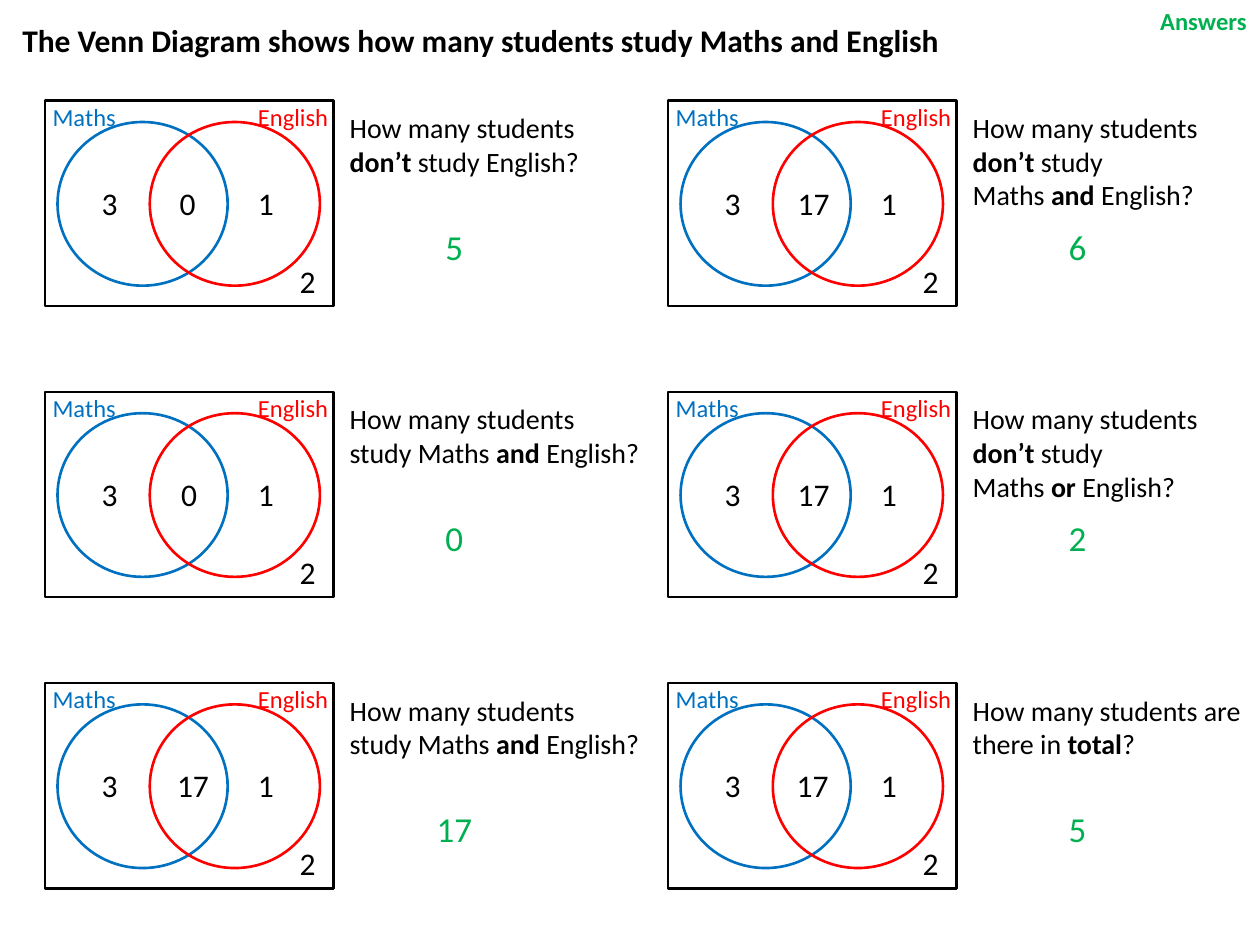
from pptx import Presentation
from pptx import util as u
from pptx.dml.color import RGBColor
from pptx.enum import shapes, text

COLORS = {"ink": "000000", "maths": "0070C0", "english": "FF0000", "answer": "00B050"}
FONT = "Calibri"

TITLE = "The Venn Diagram shows how many students study Maths and English"
CORNER = "Answers"

# Each question is a list of paragraphs; every second run of a paragraph is bold.
BOTH = [("How many students study Maths ", "and", " English?")]
NEITHER = ("How many students ", "don’t", " study")
PANELS = [
    {"both": "0", "both_left": 2.46, "answer": "5", "width": 6.15,
     "question": [("How many students ", "don’t", " study English?")]},
    {"both": "17", "both_left": 2.36, "answer": "6", "width": 6.05,
     "question": [NEITHER, ("Maths ", "and", " English?")]},
    {"both": "0", "both_left": 2.49, "answer": "0", "width": 6.4, "question": BOTH},
    {"both": "17", "both_left": 2.36, "answer": "2", "width": 6.15,
     "question": [NEITHER, ("Maths ", "or", " English?")]},
    {"both": "17", "both_left": 2.41, "answer": "17", "width": 6.4, "question": BOTH},
    {"both": "17", "both_left": 2.34, "answer": "5", "width": 6.15,
     "question": [("How many students are there in ", "total", "?")]},
]

# Panel grid, in cm
COLUMNS = 2
LEFT, TOP = 0.91, 2.03
COLUMN_STEP, ROW_STEP = 12.56, 5.87

# Parts of every diagram: box in cm from the corner of its frame
OUTLINES = [
    (shapes.MSO_SHAPE.RECTANGLE, (0, 0, 5.82, 4.14), "ink"),
    (shapes.MSO_SHAPE.OVAL, (0.25, 0.43, 3.43, 3.3), "maths"),
    (shapes.MSO_SHAPE.OVAL, (2.11, 0.43, 3.43, 3.3), "english"),
]
LABELS = [
    ("3", (0.89, 1.55, 0.91, 1.02), 18, "ink"),
    ("1", (4.04, 1.55, 0.91, 1.02), 18, "ink"),
    ("2", (4.88, 3.12, 0.91, 1.02), 18, "ink"),
    ("English", (4.04, -0.1, 2.03, 0.86), 14, "english"),
    ("Maths", (-0.1, -0.1, 2.84, 0.86), 14, "maths"),
]


def place(box, corner=(0, 0)):
    left, top, width, height = box
    return [u.Cm(value) for value in (left + corner[0], top + corner[1], width, height)]


def add_outline(parent, kind, box, color):
    shape = parent.add_shape(kind, *box)
    shape.shadow.inherit = False
    shape.fill.background()
    shape.line.color.rgb = RGBColor.from_string(COLORS[color])
    shape.line.width = u.Pt(1.5)


def add_text(parent, paragraphs, box, size, color, bold=False, wrap=True,
             align=text.PP_ALIGN.LEFT):
    """Add a text box whose runs alternate between plain and bold."""
    frame = parent.add_textbox(*box).text_frame
    frame.word_wrap = wrap
    for number, runs in enumerate(paragraphs):
        paragraph = frame.add_paragraph() if number else frame.paragraphs[0]
        paragraph.alignment = align
        for index, words in enumerate(runs):
            run = paragraph.add_run()
            run.text = words
            run.font.color.rgb = RGBColor.from_string(COLORS[color])
            font_format = {"name": FONT, "size": u.Pt(size), "bold": bold or index % 2 == 1}
            for name, value in font_format.items():
                setattr(run.font, name, value)


def add_panel(slide, panel, corner):
    diagram = slide.shapes.add_group_shape().shapes
    for kind, box, color in OUTLINES:
        add_outline(diagram, kind, place(box, corner), color)
    both = (panel["both"], (panel["both_left"], 1.55, 1.22, 1.02), 18, "ink")
    for words, box, size, color in [both] + LABELS:
        add_text(diagram, [(words,)], place(box, corner), size, color)

    question_height = 1.63 if len(panel["question"]) == 1 else 2.31
    question_box = (5.89, 0.08, panel["width"], question_height)
    add_text(slide.shapes, panel["question"], place(question_box, corner), 16, "ink")
    add_text(slide.shapes, [(panel["answer"],)], place((5.89, 2.39, 4.72, 1.12), corner),
             20, "answer", align=text.PP_ALIGN.CENTER)


def main():
    presentation = Presentation()
    presentation.slide_width, presentation.slide_height = u.Cm(25.4), u.Cm(19.05)
    slide = presentation.slides.add_slide(presentation.slide_layouts[6])

    add_text(slide.shapes, [(TITLE,)], place((0.2, 0.3, 20.78, 1.02)), 18, "ink", bold=True)
    for index, panel in enumerate(PANELS):
        row, column = divmod(index, COLUMNS)
        add_panel(slide, panel, (LEFT + column * COLUMN_STEP, TOP + row * ROW_STEP))
    add_text(slide.shapes, [(CORNER,)], place((23.14, 0, 2.26, 0.86)), 14, "answer",
             bold=True, wrap=False)

    presentation.save("out.pptx")


if __name__ == "__main__":
    main()
